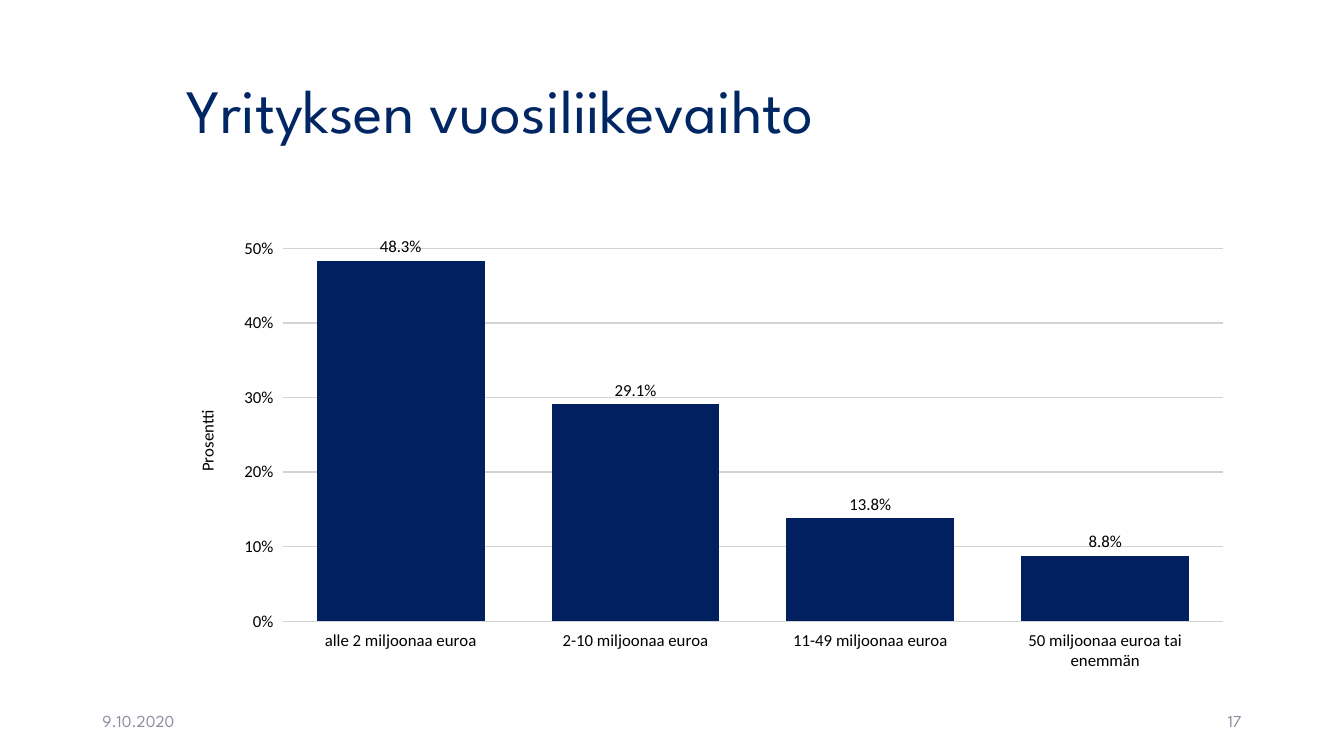
from lxml import etree
from pptx import Presentation
from pptx.chart.data import CategoryChartData
from pptx.dml.color import RGBColor
from pptx.enum.chart import XL_CHART_TYPE, XL_LABEL_POSITION, XL_TICK_MARK
from pptx.enum.text import MSO_ANCHOR, PP_ALIGN
from pptx.oxml.ns import qn
from pptx.util import Cm, Pt

COLUMNS = XL_CHART_TYPE.COLUMN_CLUSTERED
OUTSIDE_END = XL_LABEL_POSITION.OUTSIDE_END
TICK_OUTSIDE = XL_TICK_MARK.OUTSIDE
MIDDLE = MSO_ANCHOR.MIDDLE
LEFT, RIGHT = PP_ALIGN.LEFT, PP_ALIGN.RIGHT

HEADING_FONT, CHART_FONT = "League Spartan", "Calibri"
NAVY, BAR_BLUE, GREY, GRID_GREY, BLACK = "002663", "002060", "8C8E9F", "D3D3D3", "000000"

TURNOVER = {
    "alle 2 miljoonaa euroa": 0.483,
    "2-10 miljoonaa euroa": 0.291,
    "11-49 miljoonaa euroa": 0.138,
    "50 miljoonaa euroa tai enemmän": 0.088,
}
PLOT_BOX = {"x": 0.10, "y": 0.02, "w": 0.88, "h": 0.855}
VALUE_SCALE = {"minimum_scale": 0, "maximum_scale": 0.55, "major_unit": 0.1}


def rgb(colour):
    """Turn a hex string into a colour."""
    return RGBColor.from_string(colour)


def set_font(font, face, size, colour):
    """Give a font its face, size and colour."""
    for attribute, value in {"name": face, "size": Pt(size), "bold": False}.items():
        setattr(font, attribute, value)
    font.color.rgb = rgb(colour)


def add_text(slide, box, text, size, colour, align=LEFT, spacing=1.0):
    """Place one vertically centred line of text in the box."""
    frame = slide.shapes.add_textbox(*map(Cm, box)).text_frame
    frame.word_wrap = True
    frame.vertical_anchor = MIDDLE
    line = frame.paragraphs[0]
    line.alignment = align
    line.line_spacing = spacing
    run = line.add_run()
    run.text = text
    set_font(run.font, HEADING_FONT, size, colour)


def add_footer(slide, box, date, number):
    """Place the date at the left and the page number at the right of the box."""
    left, top, width, height = box
    part = 7.62
    add_text(slide, (left, top, part, height), date, 12, GREY)
    add_text(slide, (left + width - part, top, part, height), number, 12, GREY, RIGHT)


def fix_plot_area(chart):
    """Fix the inner plot area as fractions of the chart box."""
    plot_area = chart.plots[0]._element.getparent()
    for automatic in plot_area.findall(qn("c:layout")):
        plot_area.remove(automatic)
    layout = etree.Element(qn("c:layout"))
    manual = etree.SubElement(layout, qn("c:manualLayout"))
    settings = {"layoutTarget": "inner", "xMode": "edge", "yMode": "edge", **PLOT_BOX}
    for tag, value in settings.items():
        etree.SubElement(manual, qn(f"c:{tag}")).set("val", str(value))
    plot_area.insert(0, layout)


def format_axes(chart):
    """Style the category and value axes."""
    percent = chart.value_axis
    for axis in (chart.category_axis, percent):
        axis.major_tick_mark = TICK_OUTSIDE
        axis.format.line.fill.background()
        set_font(axis.tick_labels.font, CHART_FONT, 12, BLACK)
    for attribute, value in VALUE_SCALE.items():
        setattr(percent, attribute, value)
    percent.tick_labels.number_format = "0%"
    percent.tick_labels.number_format_is_linked = False
    grid = percent.major_gridlines.format.line
    grid.width = Pt(1)
    grid.color.rgb = rgb(GRID_GREY)
    caption = percent.axis_title.text_frame.paragraphs[0].add_run()
    caption.text = "Prosentti"
    set_font(caption.font, CHART_FONT, 12, BLACK)


def add_turnover_chart(slide, box):
    """Place the column chart of yearly turnover in the box."""
    data = CategoryChartData(number_format="0.0%")
    data.categories = list(TURNOVER)
    data.add_series("Series 1", list(TURNOVER.values()))
    chart = slide.shapes.add_chart(COLUMNS, *map(Cm, box), data).chart
    chart.has_legend = False
    chart.has_title = False
    set_font(chart.font, CHART_FONT, 11, BLACK)
    columns = chart.plots[0]
    columns.gap_width = 40
    columns.vary_by_categories = False
    bars = columns.series[0]
    bars.format.fill.solid()
    bars.format.fill.fore_color.rgb = rgb(BAR_BLUE)
    labels = bars.data_labels
    label_format = {
        "show_value": True,
        "position": OUTSIDE_END,
        "number_format": "0.0%",
        "number_format_is_linked": False,
    }
    for attribute, value in label_format.items():
        setattr(labels, attribute, value)
    set_font(labels.font, CHART_FONT, 12, BLACK)
    format_axes(chart)
    fix_plot_area(chart)


def main():
    """Build the slide and save it."""
    deck = Presentation()
    deck.slide_width, deck.slide_height = Cm(33.87), Cm(19.05)
    slide = deck.slides.add_slide(deck.slide_layouts[6])
    add_text(slide, (4.45, 1.02, 26.9, 3.68), "Yrityksen vuosiliikevaihto", 44, NAVY, spacing=0.9)
    add_footer(slide, (2.33, 17.66, 29.21, 1.01), "9.10.2020", "17")
    add_turnover_chart(slide, (4.45, 5.08, 26.9, 12.09))
    deck.save("out.pptx")


if __name__ == "__main__":
    main()
